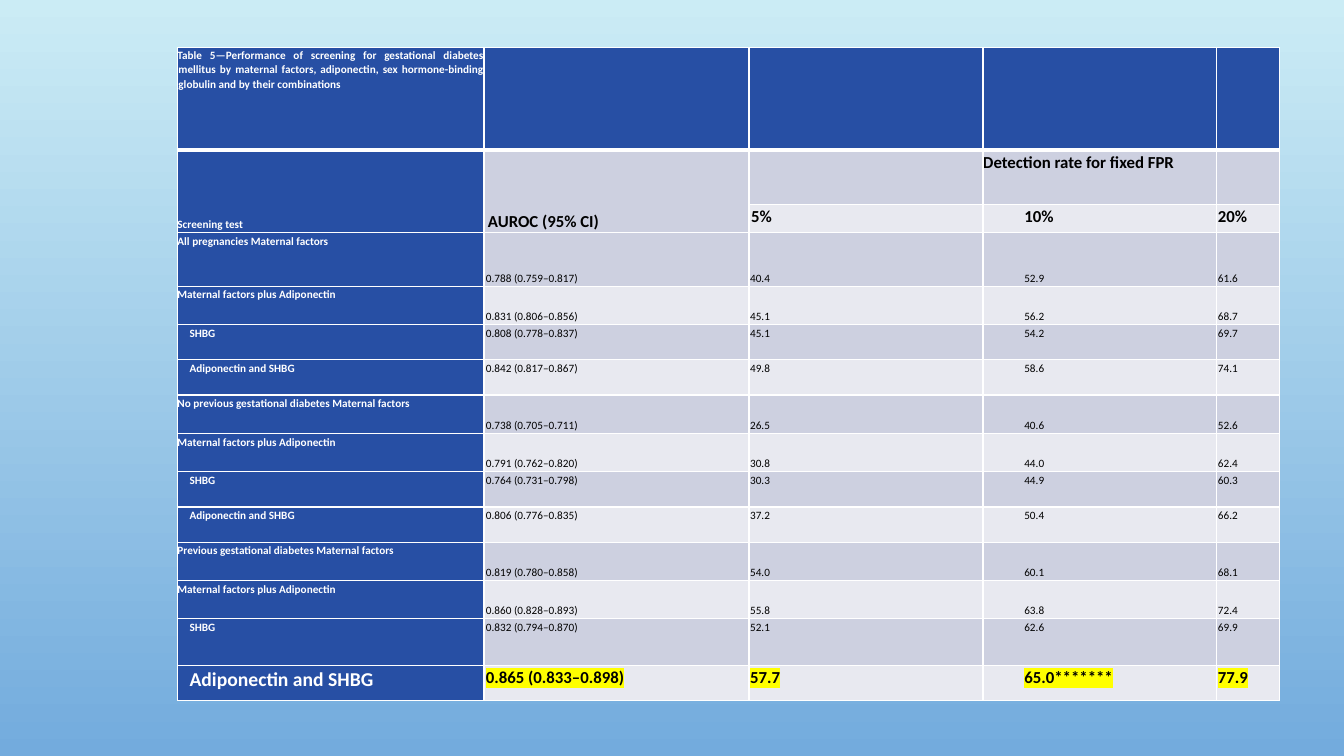
import pptx
import pptx.dml.color
import pptx.enum.text
import pptx.oxml
import pptx.oxml.ns
import pptx.util

RGB = pptx.dml.color.RGBColor
ANCHOR = pptx.enum.text.MSO_ANCHOR
ALIGN = pptx.enum.text.PP_ALIGN

NAVY = RGB(0x27, 0x4F, 0xA4)
DARK_BAND = RGB(0xCD, 0xD0, 0xE0)
LIGHT_BAND = RGB(0xE8, 0xE9, 0xF0)
WHITE = RGB(0xFF, 0xFF, 0xFF)
BLACK = RGB(0, 0, 0)
YELLOW = RGB(0xFF, 0xFF, 0)
SKY_TOP = RGB(0xCB, 0xEC, 0xF5)
SKY_BOTTOM = RGB(0x73, 0xAB, 0xDD)

EMU_PER_PX = 9144
COLUMN_WIDTHS = [304, 263, 232, 232, 62]
ROW_HEIGHTS = [102, 54, 28, 53, 38, 35, 35, 38, 38, 35, 35, 38, 38, 46, 35]
VALUE_INDENTS = [3, 2, 42, 2]
FIRST_RESULT_ROW = 3

TITLE = ("Table 5—Performance of screening for gestational diabetes mellitus by maternal "
         "factors, adiponectin, sex hormone-binding globulin and by their combinations")
PLUS_ADIPONECTIN = "Maternal factors plus Adiponectin"
BOTH = "Adiponectin and SHBG"
RESULTS = [
    ("All pregnancies Maternal factors", "0.788 (0.759–0.817)", "40.4", "52.9", "61.6"),
    (PLUS_ADIPONECTIN, "0.831 (0.806–0.856)", "45.1", "56.2", "68.7"),
    ("SHBG", "0.808 (0.778–0.837)", "45.1", "54.2", "69.7"),
    (BOTH, "0.842 (0.817–0.867)", "49.8", "58.6", "74.1"),
    ("No previous gestational diabetes Maternal factors", "0.738 (0.705–0.711)",
     "26.5", "40.6", "52.6"),
    (PLUS_ADIPONECTIN, "0.791 (0.762–0.820)", "30.8", "44.0", "62.4"),
    ("SHBG", "0.764 (0.731–0.798)", "30.3", "44.9", "60.3"),
    (BOTH, "0.806 (0.776–0.835)", "37.2", "50.4", "66.2"),
    ("Previous gestational diabetes Maternal factors", "0.819 (0.780–0.858)",
     "54.0", "60.1", "68.1"),
    (PLUS_ADIPONECTIN, "0.860 (0.828–0.893)", "55.8", "63.8", "72.4"),
    ("SHBG", "0.832 (0.794–0.870)", "52.1", "62.6", "69.9"),
    (BOTH, "0.865 (0.833–0.898)", "57.7", "65.0*******", "77.9"),
]


def px(n):
    return pptx.util.Emu(n * EMU_PER_PX)


class Deck:
    font = "Calibri"
    line_spacing = 1.07

    def __init__(self, width, height):
        self.prs = pptx.Presentation()
        self.prs.slide_width = px(width)
        self.prs.slide_height = px(height)
        self.s = self.prs.slides.add_slide(self.prs.slide_layouts[6])

    def background(self, top, bottom):
        fill = self.s.background.fill
        fill.gradient()
        fill.gradient_angle = 270
        for stop, color, position in zip(fill.gradient_stops, (top, bottom), (0, 1)):
            stop.color.rgb = color
            stop.position = position

    def table(self, x, y, widths, heights):
        frame = self.s.shapes.add_table(len(heights), len(widths), px(x), px(y),
                                        px(sum(widths)), px(sum(heights)))
        table = frame.table
        table.first_row = False
        table.horz_banding = False
        for column, width in zip(table.columns, widths):
            column.width = px(width)
        for row, height in zip(table.rows, heights):
            row.height = px(height)
        return table

    def cell(self, cell, fill, top_line=1, bottom_line=1):
        cell.fill.solid()
        cell.fill.fore_color.rgb = fill
        lines = {"lnL": 1, "lnR": 1, "lnT": top_line, "lnB": bottom_line}
        for i, (tag, weight) in enumerate(lines.items()):
            line = pptx.oxml.parse_xml(
                f'<a:{tag} {pptx.oxml.ns.nsdecls("a")} w="{pptx.util.Pt(weight)}">'
                f'<a:solidFill><a:srgbClr val="{WHITE}"/></a:solidFill></a:{tag}>')
            cell._tc.get_or_add_tcPr().insert(i, line)
        cell.margin_left = 0
        cell.margin_right = px(15)
        cell.margin_top = cell.margin_bottom = px(1)
        cell.text_frame.paragraphs[0].font.size = pptx.util.Pt(8)

    def text(self, cell, text, size=8, color=BLACK, bold=True, indent=1, hanging=1,
             bottom=False, justified=False, highlight=None):
        cell.vertical_anchor = ANCHOR.BOTTOM if bottom else ANCHOR.TOP
        p = cell.text_frame.paragraphs[0]
        p.alignment = ALIGN.JUSTIFY if justified else ALIGN.LEFT
        p.line_spacing = self.line_spacing
        pPr = p._p.get_or_add_pPr()
        pPr.set("marL", str(px(indent)))
        pPr.set("indent", str(px(-hanging)))
        p.font.name = self.font
        p.font.size = pptx.util.Pt(size)
        p.font.bold = bold
        p.font.color.rgb = color
        r = p.add_run()
        r.text = text
        if highlight is not None:
            r._r.get_or_add_rPr().append(pptx.oxml.parse_xml(
                f'<a:highlight {pptx.oxml.ns.nsdecls("a")}>'
                f'<a:srgbClr val="{highlight}"/></a:highlight>'))

    def save(self):
        self.prs.save("out.pptx")


def add_headings(deck, table):
    title = table.cell(0, 0)
    deck.text(title, TITLE, color=WHITE, justified=True)
    title.margin_right = title.margin_top = title.margin_bottom = 0
    for column in (0, 1):
        table.cell(1, column).merge(table.cell(2, column))
    deck.text(table.cell(1, 0), "Screening test", color=WHITE, bottom=True)
    deck.text(table.cell(1, 1), "AUROC (95% CI)", size=12, indent=5, bottom=True)
    deck.text(table.cell(1, 3), "Detection rate for fixed FPR", size=12)
    for column, (rate, indent) in enumerate([("5%", 3), ("10%", 42), ("20%", 2)], 2):
        deck.text(table.cell(2, column), rate, size=12, indent=indent)


def add_results(deck, table):
    for row, (test, *values) in enumerate(RESULTS, FIRST_RESULT_ROW):
        best = row == len(ROW_HEIGHTS) - 1
        group = test.endswith("Maternal factors")
        plus = test == PLUS_ADIPONECTIN
        deck.text(table.cell(row, 0), test, size=14 if best else 8, color=WHITE,
                  indent=1 if group else 13, hanging=13 if plus else 1, justified=group)
        for column, (value, indent) in enumerate(zip(values, VALUE_INDENTS), 1):
            deck.text(table.cell(row, column), value, size=12 if best else 8, bold=best,
                      indent=indent, bottom=group or plus,
                      highlight=YELLOW if best else None)


def main():
    deck = Deck(1333, 750)
    deck.background(SKY_TOP, SKY_BOTTOM)
    table = deck.table(176, 47, COLUMN_WIDTHS, ROW_HEIGHTS)
    for row in range(len(ROW_HEIGHTS)):
        band = DARK_BAND if row % 2 else LIGHT_BAND
        for column in range(len(COLUMN_WIDTHS)):
            deck.cell(table.cell(row, column), NAVY if row == 0 or column == 0 else band,
                      top_line=3 if row == 1 else 1, bottom_line=3 if row == 0 else 1)
    add_headings(deck, table)
    add_results(deck, table)
    deck.save()


if __name__ == "__main__":
    main()
